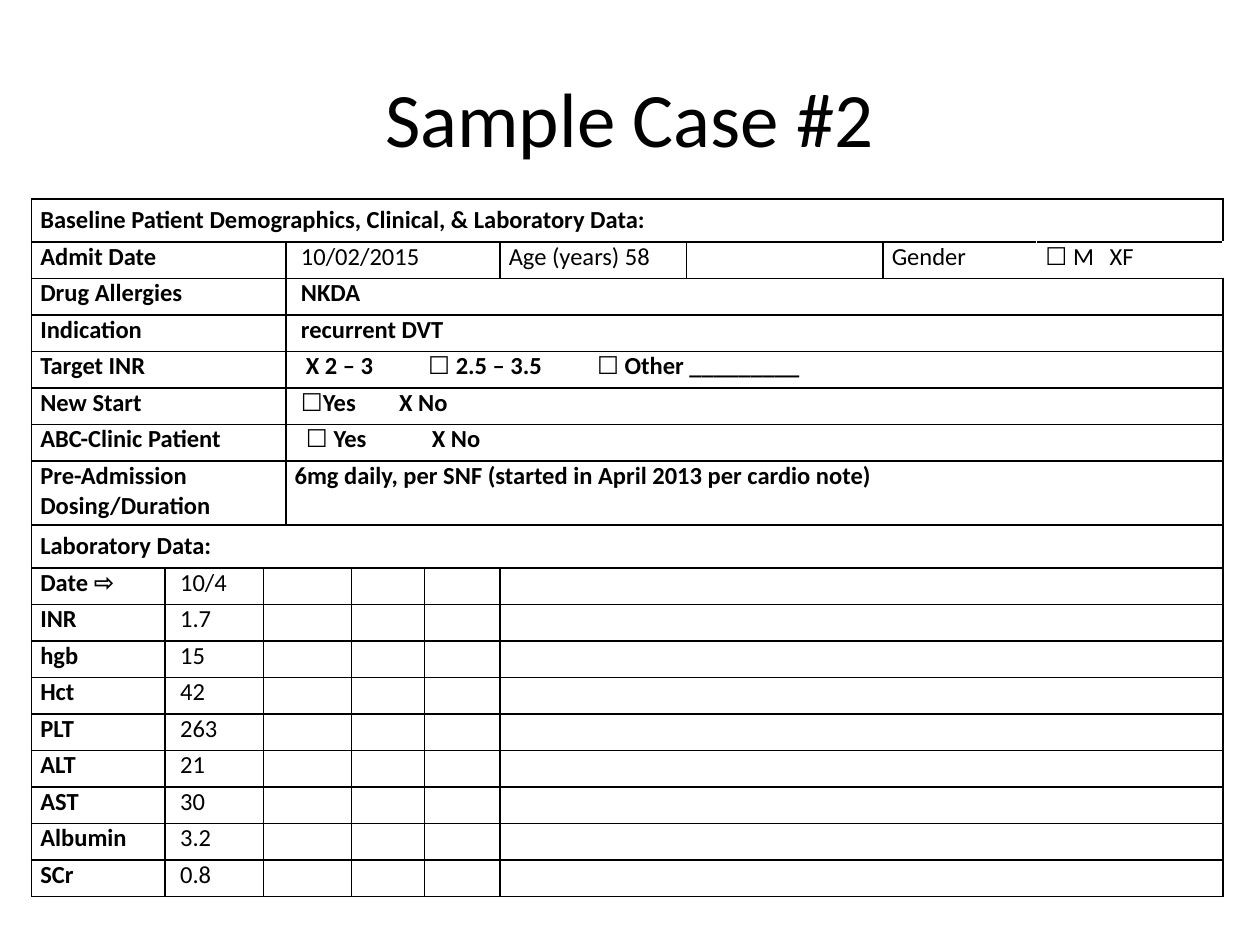
from lxml.etree import SubElement
from pptx import Presentation
from pptx.dml.color import RGBColor
from pptx.enum.text import MSO_ANCHOR, PP_ALIGN
from pptx.oxml.ns import qn
from pptx.util import Inches, Pt

BLACK = RGBColor(0, 0, 0)
WHITE = RGBColor(255, 255, 255)
FONT = "Calibri"
INSET = 0.07
COLS = [1.06, 0.78, 0.14, 0.52, 0.58, 0.6, 1.48, 1.56, 1.22, 1.48]
ROW, HEADING_ROW, DOUBLE_ROW = 0.29, 0.34, 0.51

HEADINGS = {0: "Baseline Patient Demographics, Clinical, & Laboratory Data:",
            8: "Laboratory Data:"}
# label, answer, indent of the answer, tab stops
DETAILS = [
    ("Admit Date", "10/02/2015", 0.05, []),
    ("Drug Allergies", "NKDA", 0.05, []),
    ("Indication", "recurrent DVT", 0.05, []),
    ("Target INR", "X 2 – 3\t☐ 2.5 – 3.5\t☐ Other _________", 0.09, [0.97, 2.31]),
    ("New Start", "☐Yes\tX No", 0.05, [0.78]),
    ("ABC-Clinic Patient", "☐ Yes\tX No", 0.09, [1.0]),
    ("Pre-Admission\nDosing/Duration",
     "6mg daily, per SNF (started in April 2013 per cardio note)", 0, []),
]
LABS = [("Date ⇨", "10/4"), ("INR", "1.7"), ("hgb", "15"), ("Hct", "42"),
        ("PLT", "263"), ("ALT", "21"), ("AST", "30"), ("Albumin", "3.2"),
        ("SCr", "0.8")]
FIRST_LAB = 9


def set_border(cell, side, color):
    """Draw one side (L, R, T or B) of a cell as a 1 pt line."""
    ln = SubElement(cell._tc.get_or_add_tcPr(), qn(f"a:ln{side}"), w=str(Pt(1)))
    fill = SubElement(ln, qn("a:solidFill"))
    SubElement(fill, qn("a:srgbClr"), val=str(color))


def write(cell, text, bold=True, indent=0, tabs=()):
    cell.text_frame.text = text
    cell.margin_left = Inches(INSET + indent)
    for p in cell.text_frame.paragraphs:
        if tabs:
            tab_list = SubElement(p._p.get_or_add_pPr(), qn("a:tabLst"))
            for pos in tabs:
                SubElement(tab_list, qn("a:tab"), pos=str(Inches(pos)), algn="l")
        for r in p.runs:
            r.font.name = FONT
            r.font.size = Pt(14)
            r.font.bold = bold
            r.font.color.rgb = BLACK


prs = Presentation()
prs.slide_width, prs.slide_height = Inches(10), Inches(7.5)
s = prs.slides.add_slide(prs.slide_layouts[6])

# Table grid
rows = [ROW] * (FIRST_LAB + len(LABS))
for i in HEADINGS:
    rows[i] = HEADING_ROW
rows[len(DETAILS)] = DOUBLE_ROW
table = s.shapes.add_table(len(rows), len(COLS), Inches(0.25), Inches(1.58),
                           Inches(sum(COLS)), Inches(sum(rows))).table
table.first_row = table.horz_banding = False
for column, width in zip(table.columns, COLS):
    column.width = Inches(width)
for row, height in zip(table.rows, rows):
    row.height = Inches(height)

# Plain cells with black rules; the gender cells are open at the sides
open_sides = {(1, 8): "R", (1, 9): "LR"}
for i in range(len(rows)):
    for j in range(len(COLS)):
        cell = table.cell(i, j)
        cell.margin_left = cell.margin_right = Inches(INSET)
        cell.margin_top = cell.margin_bottom = 0
        for side in "LRTB":
            hidden = side in open_sides.get((i, j), "")
            set_border(cell, side, WHITE if hidden else BLACK)
        cell.fill.background()
        end = cell.text_frame.paragraphs[0]._p.get_or_add_endParaRPr()
        end.set("sz", "1400")

# Section headings
for i, heading in HEADINGS.items():
    table.cell(i, 0).merge(table.cell(i, len(COLS) - 1))
    table.cell(i, 0).vertical_anchor = MSO_ANCHOR.MIDDLE
    write(table.cell(i, 0), heading)

# Patient details
for i, (label, answer, indent, tabs) in enumerate(DETAILS, 1):
    table.cell(i, 0).merge(table.cell(i, 2))
    table.cell(i, 3).merge(table.cell(i, 5 if i == 1 else 9))
    write(table.cell(i, 0), label)
    write(table.cell(i, 3), answer, i > 1, indent, tabs)
write(table.cell(1, 6), "Age (years) 58", False)
write(table.cell(1, 8), "Gender", False)
write(table.cell(1, 9), "☐ M\tXF", False, tabs=[0.51])

# Laboratory values
for i, (test, value) in enumerate(LABS, FIRST_LAB):
    table.cell(i, 2).merge(table.cell(i, 3))
    table.cell(i, 6).merge(table.cell(i, 9))
    write(table.cell(i, 0), test)
    write(table.cell(i, 1), value, False, 0.05)

# Title
title = s.shapes.add_textbox(Inches(0.5), Inches(0.3), Inches(9), Inches(1.25))
tf = title.text_frame
tf.word_wrap = True
tf.vertical_anchor = MSO_ANCHOR.MIDDLE
tf.text = "Sample Case #2"
p = tf.paragraphs[0]
p.alignment = PP_ALIGN.CENTER
r = p.runs[0]
r.font.name = FONT
r.font.size = Pt(44)
r.font.color.rgb = BLACK

prs.save("out.pptx")
